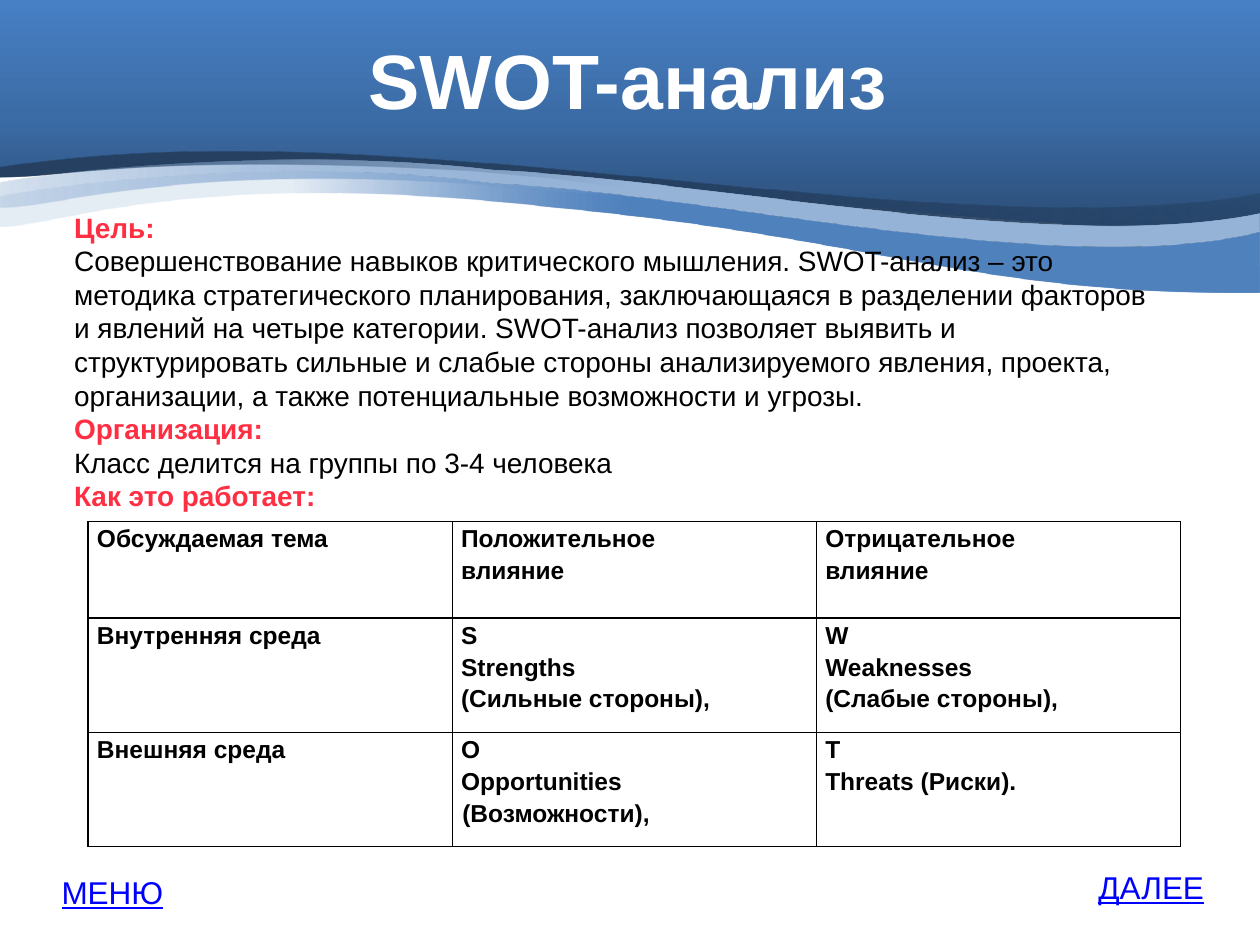
from lxml import etree
from pptx import Presentation
from pptx.dml.color import RGBColor
from pptx.enum import text
from pptx.oxml import ns
from pptx.util import Pt

RED, BLACK, WHITE, BLUE = "FF2F43", "000000", "FFFFFF", "0000FF"

# Header and waves: a pair is a corner, six numbers are a Bezier curve.
# Gradient stops are position, colour, opacity in percent.
WAVES = [
    {"outline": [(-0.7, -0.7), (720, -0.7), (720, 131.8),
                 (479.5, 131.8, 207.4, 66.2, -0.7, 95.8)],
     "stops": [(0, "2A4C75", 100), (50, "3C6CA6", 100), (100, "4780C5", 100)],
     "angle": 90},
    {"outline": [(722.2, 110.2), (722.2, 131.8),
                 (560.9, 153.4, 452.2, 113, 270.7, 97.9),
                 (87.1, 87.8, 33.8, 101.5, 0, 101.5), (0, 95.8),
                 (229.7, 59.8, 537.8, 144.7, 722.2, 110.2)],
     "stops": [(0, "254061", 50), (50, "254061", 100), (100, "254061", 100)],
     "angle": 180},
    {"outline": [(720, 121.7), (720, 151.9),
                 (557.3, 153.4, 499, 123.8, 318.2, 109.4),
                 (108.7, 88.6, 33.8, 119.5, 0, 118.8),
                 (0, 118.1, -0.7, 113.8, 0, 104.4),
                 (33.1, 97.9, 166.3, 82.8, 282.2, 97.2),
                 (401.8, 102.2, 607.7, 146.2, 720, 121.7)],
     "stops": [(0, "95B3D7", 100), (50, "95B3D7", 100), (100, "95B3D7", 21)],
     "angle": 180},
    {"outline": [(720, 132.5), (720, 167),
                 (557.3, 168.5, 499, 135.4, 318.2, 118.8),
                 (108.7, 95, 33.8, 129.6, 0, 129.6),
                 (0, 128.2, -0.7, 123.8, 0, 112.3),
                 (33.1, 105.8, 166.3, 88.6, 282.2, 105.1),
                 (401.8, 110.2, 607.7, 160.6, 720, 132.5)],
     "stops": [(0, "4F81BD", 100), (50, "4F81BD", 100), (77, "95B3D7", 12)],
     "angle": 180},
]
LAYERS = 2  # the translucent waves are laid over each other

TITLE = {"size": Pt(44), "bold": True, "color": WHITE}
HEADING = {"size": Pt(16), "bold": True, "color": RED}
BODY = {"size": Pt(16), "bold": False, "color": BLACK}
LINK = {"size": Pt(18), "underline": True, "color": BLUE}
CELL = {"size": Pt(14), "bold": True, "color": BLACK}

DESCRIPTION = [
    ("Цель:", HEADING),
    ("Совершенствование навыков критического мышления. SWOT-анализ – это "
     "методика стратегического планирования, заключающаяся в разделении "
     "факторов и явлений на четыре категории. SWOT-анализ позволяет выявить "
     "и структурировать сильные и слабые стороны анализируемого явления, "
     "проекта, организации, а также потенциальные возможности и угрозы.", BODY),
    ("Организация:", HEADING),
    ("Класс делится на группы по 3-4 человека", BODY),
    ("Как это работает:", HEADING),
]
# Left, top, width, height, paragraphs
BOXES = [
    (84.2, 0, 549.4, 90, [("SWOT-анализ", TITLE)]),
    (35.3, 116.6, 635, 200.9, DESCRIPTION),
    (620.6, 492.5, 79.2, 28.8, [("ДАЛЕЕ", LINK)]),
    (28.1, 495.4, 79.2, 28.8, [("МЕНЮ", LINK)]),
]

SWOT = [
    [["Обсуждаемая тема"], ["Положительное", "влияние"],
     ["Отрицательное", "влияние"]],
    [["Внутренняя среда"], ["S", "Strengths", "(Cильные стороны),"],
     ["W", "Weaknesses", "(Слабые стороны),"]],
    [["Внешняя среда"], ["O", "Opportunities (Возможности),"],
     ["T", "Threats (Риски)."]],
]
TABLE_LEFT, TABLE_TOP, COLUMN_WIDTH = 50.4, 298, 208.1
ROW_HEIGHTS = [55.3, 65.2, 65.2]


def rgb(value):
    return RGBColor.from_string(value)


def add_element(parent, tag, **attributes):
    return etree.SubElement(parent, ns.qn(tag), attributes)


def write(para, words, style):
    span = para.add_run()
    span.text = words
    span.font.name = "Arial"
    for name, value in style.items():
        if name == "color":
            span.font.color.rgb = rgb(value)
        else:
            setattr(span.font, name, value)


def paragraphs(frame, count):
    """Return the frame's first paragraph followed by new ones."""
    return [frame.paragraphs[0]] + [frame.add_paragraph() for _ in range(count - 1)]


def bend(wave, outline):
    """Replace the straight segments that stand for curves."""
    segments = wave.element.findall(".//" + ns.qn("a:lnTo"))
    for segment, step in zip(segments, outline[1:]):
        if len(step) == 2:
            continue
        curve = etree.Element(ns.qn("a:cubicBezTo"))
        for x, y in zip(step[::2], step[1::2]):
            add_element(curve, "a:pt", x=str(Pt(x) - wave.left), y=str(Pt(y) - wave.top))
        segment.getparent().replace(segment, curve)


def add_wave(page, outline, stops, angle):
    start, *corners = [(Pt(step[-2]), Pt(step[-1])) for step in outline]
    builder = page.shapes.build_freeform(*start)
    builder.add_line_segments(corners, close=True)
    wave = builder.convert_to_shape()
    bend(wave, outline)
    wave.shadow.inherit = False
    wave.line.fill.background()
    wave.fill.gradient()
    wave.fill.gradient_angle = angle
    stop_list = wave.element.spPr.find(".//" + ns.qn("a:gsLst"))
    stop_list.clear()
    for position, color, opacity in stops:
        stop = add_element(stop_list, "a:gs", pos=str(position * 1000))
        tone = add_element(stop, "a:srgbClr", val=color)
        if opacity < 100:
            add_element(tone, "a:alpha", val=str(opacity * 1000))


def add_box(page, left, top, width, height, content):
    box = page.shapes.add_textbox(Pt(left), Pt(top), Pt(width), Pt(height))
    frame = box.text_frame
    frame.word_wrap = True
    for para, (words, style) in zip(paragraphs(frame, len(content)), content):
        write(para, words, style)
    return frame


def fill_cell(cell, lines):
    cell.margin_left = cell.margin_right = Pt(5)
    cell.margin_top = cell.margin_bottom = 0
    # Borders come before the fill in the cell properties
    properties = cell._tc.get_or_add_tcPr()
    for side in ("a:lnL", "a:lnR", "a:lnT", "a:lnB"):
        border = add_element(properties, side, w=str(Pt(1)))
        add_element(add_element(border, "a:solidFill"), "a:srgbClr", val=BLACK)
    cell.fill.background()
    for para, words in zip(paragraphs(cell.text_frame, len(lines)), lines):
        para.alignment = text.PP_ALIGN.JUSTIFY
        para.line_spacing = 1.15
        layout = para._p.get_or_add_pPr()
        layout.set("marL", str(Pt(0.7)))
        layout.set("indent", str(-Pt(0.7)))
        write(para, words, CELL)


def main():
    deck = Presentation()
    deck.slide_width, deck.slide_height = Pt(720), Pt(540)
    page = deck.slides.add_slide(deck.slide_layouts[6])

    # Header and waves
    for wave in WAVES * LAYERS:
        add_wave(page, **wave)

    # Title, description and navigation
    title, *_ = [add_box(page, *box) for box in BOXES]
    title.vertical_anchor = text.MSO_ANCHOR.MIDDLE
    title.paragraphs[0].alignment = text.PP_ALIGN.CENTER

    # SWOT table
    columns = len(SWOT[0])
    table = page.shapes.add_table(
        len(SWOT), columns, Pt(TABLE_LEFT), Pt(TABLE_TOP),
        Pt(COLUMN_WIDTH * columns), Pt(sum(ROW_HEIGHTS))).table
    for column in table.columns:
        column.width = Pt(COLUMN_WIDTH)
    for r, (height, cells) in enumerate(zip(ROW_HEIGHTS, SWOT)):
        table.rows[r].height = Pt(height)
        for c, lines in enumerate(cells):
            fill_cell(table.cell(r, c), lines)

    deck.save("out.pptx")


if __name__ == "__main__":
    main()
